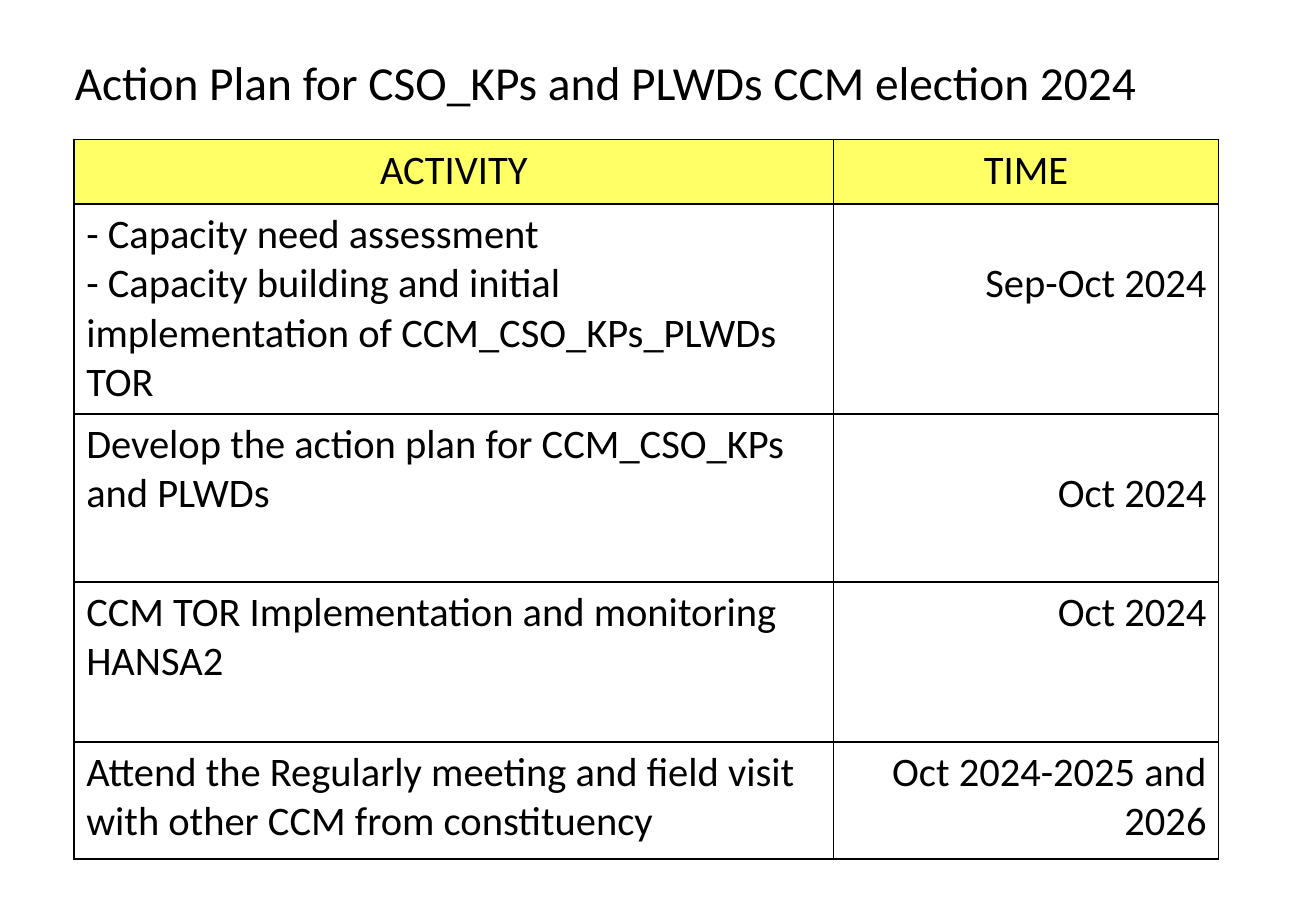
from lxml.etree import SubElement
from pptx import Presentation
from pptx.dml.color import RGBColor
from pptx.enum.text import MSO_ANCHOR, MSO_AUTO_SIZE, PP_ALIGN
from pptx.oxml.ns import qn
from pptx.util import Inches, Pt

ACTIVITIES = [
    (["- Capacity need assessment",
      "- Capacity building and initial implementation of CCM_CSO_KPs_PLWDs TOR"],
     "Sep-Oct 2024", 1),
    (["Develop the action plan for CCM_CSO_KPs and PLWDs"], "Oct 2024", 1),
    (["CCM TOR Implementation and monitoring HANSA2"], "Oct 2024", 0),
    (["Attend the Regularly meeting and field visit with other CCM from constituency"],
     "Oct 2024-2025 and 2026", 0),
]
COLUMN_WIDTHS = [57.71, 29.27]
ROW_HEIGHTS = [7.07, 23.05, 18.44, 17.56, 12.84]


def color(value):
    return RGBColor.from_string(value)


class ActionPlanSlide:
    font_name = "Calibri"
    ink = "000000"
    header_fill = "FFFF66"
    title_size = 28.1
    cell_size = 24
    line_height = 1.22
    grid_parts = 100

    def __init__(self, presentation):
        self.width = presentation.slide_width
        self.height = presentation.slide_height
        self.slide = presentation.slides.add_slide(presentation.slide_layouts[5])

    def columns(self, count):
        return round(self.width * count / self.grid_parts)

    def rows(self, count):
        return round(self.height * count / self.grid_parts)

    def add_run(self, paragraph, text, size):
        run = paragraph.add_run()
        run.text = text
        run.font.name = self.font_name
        run.font.size = Pt(size)
        run.font.bold = False
        run.font.color.rgb = color(self.ink)

    def title(self, text, left, top, width, height):
        shape = self.slide.shapes.title
        shape.left, shape.top = self.columns(left), self.rows(top)
        shape.width, shape.height = self.columns(width), self.rows(height)
        frame = shape.text_frame
        frame.word_wrap = True
        frame.auto_size = MSO_AUTO_SIZE.NONE
        frame.vertical_anchor = MSO_ANCHOR.MIDDLE
        paragraph = frame.paragraphs[0]
        paragraph.alignment = PP_ALIGN.CENTER
        paragraph.line_spacing = 0.8
        self.add_run(paragraph, text, self.title_size)

    def borders(self, cell):
        properties = cell._tc.get_or_add_tcPr()
        for side in ("a:lnL", "a:lnR", "a:lnT", "a:lnB"):
            line = SubElement(properties, qn(side), w=str(Pt(1)))
            fill = SubElement(line, qn("a:solidFill"))
            SubElement(fill, qn("a:srgbClr"), val=self.ink)

    def cell(self, cell, lines, alignment, fill=None, lines_above=0):
        self.borders(cell)
        if fill:
            cell.fill.solid()
            cell.fill.fore_color.rgb = color(fill)
        else:
            cell.fill.background()
        cell.margin_top = Inches(0.05) + Pt(lines_above * self.cell_size * self.line_height)
        frame = cell.text_frame
        for index, text in enumerate(lines):
            paragraph = frame.add_paragraph() if index else frame.paragraphs[0]
            paragraph.alignment = alignment
            self.add_run(paragraph, text, self.cell_size)

    def table(self, headings, activities, left, top):
        table = self.slide.shapes.add_table(
            len(ROW_HEIGHTS), len(COLUMN_WIDTHS),
            self.columns(left), self.rows(top),
            self.columns(sum(COLUMN_WIDTHS)), self.rows(sum(ROW_HEIGHTS))).table
        table.first_row = False
        table.horz_banding = False
        for column, width in zip(table.columns, COLUMN_WIDTHS):
            column.width = self.columns(width)
        for row, height in zip(table.rows, ROW_HEIGHTS):
            row.height = self.rows(height)
        for index, heading in enumerate(headings):
            self.cell(table.cell(0, index), [heading], PP_ALIGN.CENTER, self.header_fill)
        for index, (activity, time, lines_above) in enumerate(activities, 1):
            self.cell(table.cell(index, 0), activity, PP_ALIGN.LEFT)
            self.cell(table.cell(index, 1), [time], PP_ALIGN.RIGHT, lines_above=lines_above)


def main():
    presentation = Presentation()
    presentation.slide_width = Inches(10.83)
    presentation.slide_height = Inches(7.5)
    plan = ActionPlanSlide(presentation)
    plan.title("Action Plan for CSO_KPs and PLWDs CCM election 2024", 3.6, 5.07, 84.86, 8.93)
    plan.table(["ACTIVITY", "TIME"], ACTIVITIES, 5.63, 15.33)
    presentation.save("out.pptx")


if __name__ == "__main__":
    main()
